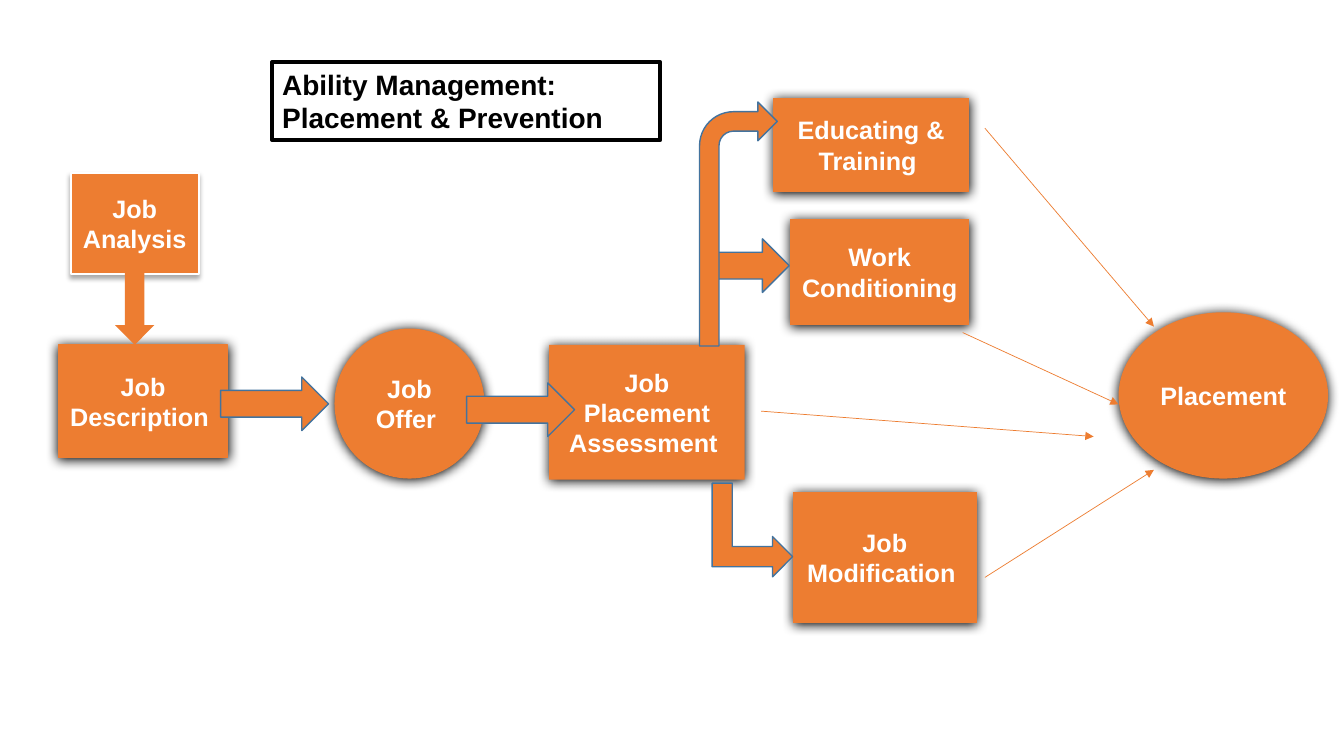
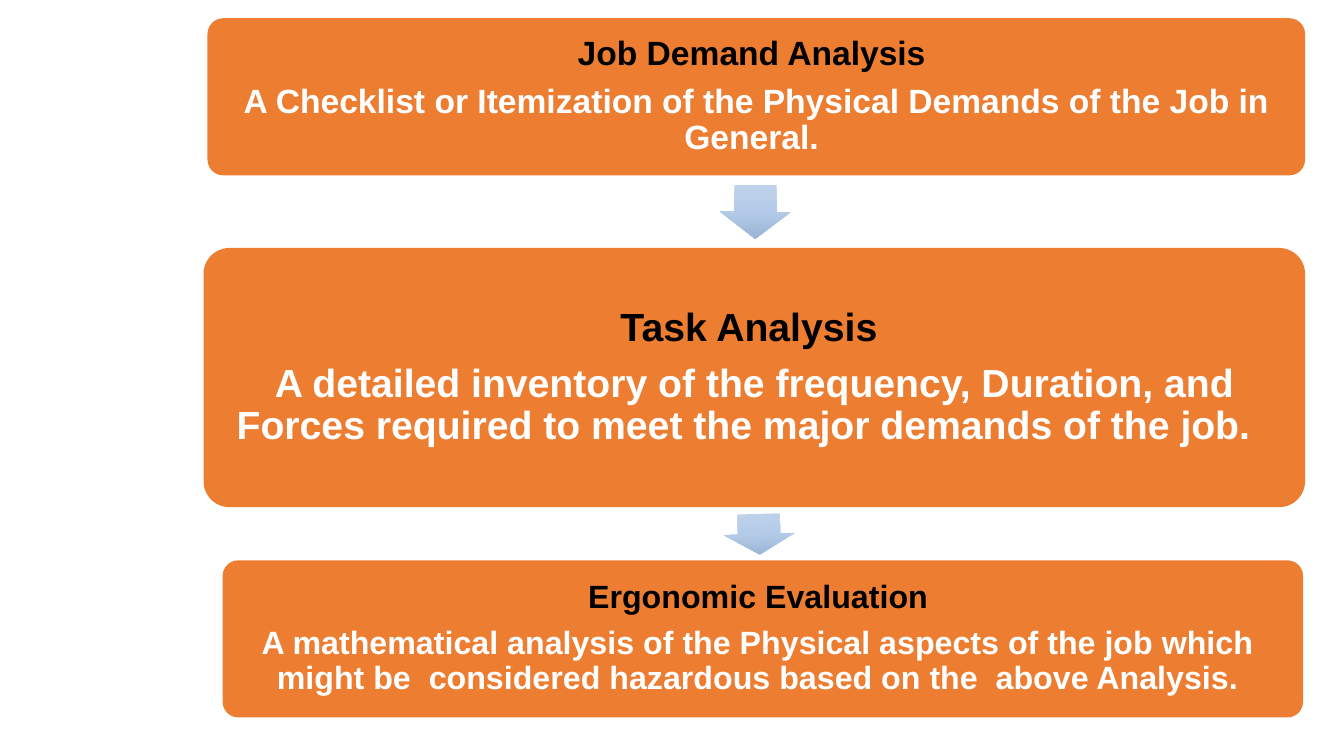
"""Build two slides on job placement flow and levels of job analysis."""
from copy import deepcopy
from dataclasses import dataclass

from lxml.etree import SubElement
from pptx import Presentation
from pptx.dml.color import RGBColor as RGB
from pptx.enum.shapes import MSO_CONNECTOR as LineKind, MSO_SHAPE as Kind
from pptx.enum.text import MSO_ANCHOR as Anchor, PP_ALIGN as Align
from pptx.oxml.ns import qn
from pptx.util import Cm, Pt


@dataclass(frozen=True)
class Theme:
    font: str = "Arial"
    orange: RGB = RGB(0xED, 0x7D, 0x31)
    outline: RGB = RGB(0x43, 0x73, 0x9E)
    black: RGB = RGB(0, 0, 0)
    white: RGB = RGB(255, 255, 255)
    fade: tuple = ("C0D2EB", "B3CBE9", "9BB4D3")
    title_size: int = 20
    step_size: int = 18
    soft_shadow: tuple = (32, 3.5, 2.2)
    strong_shadow: tuple = (100, 8.5, 1)


THEME = Theme()

HEADING = ["Ability Management:", "Placement & Prevention"]
HEADING_BOX = (6.86, 1.57, 9.78, 1.96)

STEPS = [
    ("Job Analysis ", Kind.RECTANGLE, (1.78, 4.37, 3.23, 2.54), (THEME.white, 1.5), THEME.soft_shadow),
    ("Job Description ", Kind.RECTANGLE, (1.47, 8.69, 4.27, 2.84), (THEME.orange, 1), THEME.strong_shadow),
    ("Job Offer ", Kind.OVAL, (8.43, 8.28, 3.78, 3.78), None, THEME.strong_shadow),
    ("Job Placement Assessment ", Kind.RECTANGLE, (13.84, 8.69, 4.93, 3.4), None, THEME.strong_shadow),
    ("Educating & Training ", Kind.FLOWCHART_PROCESS, (19.48, 2.46, 4.95, 2.39), None, THEME.strong_shadow),
    ("Work Conditioning ", Kind.FLOWCHART_PROCESS, (19.91, 5.51, 4.52, 2.69), None, THEME.strong_shadow),
    ("Placement ", Kind.OVAL, (28.19, 7.87, 5.28, 4.19), None, THEME.strong_shadow),
    ("Job Modification ", Kind.FLOWCHART_PROCESS, (19.99, 12.4, 4.62, 3.3), None, THEME.strong_shadow),
]

BLOCK_ARROWS = [
    (Kind.DOWN_ARROW, (2.9, 6.53, 0.99, 2.16), 0, None),
    (Kind.RIGHT_ARROW, (5.56, 9.5, 2.72, 1.35), 0, (THEME.outline, 1)),
    (Kind.RIGHT_ARROW, (11.76, 9.65, 2.72, 1.35), 0, (THEME.outline, 1)),
    (Kind.RIGHT_ARROW, (17.96, 6.02, 1.93, 1.35), 0, (THEME.outline, 1)),
    (Kind.BENT_UP_ARROW, (17.78, 12.34, 2.36, 2.03), 90, (THEME.outline, 1)),
    (Kind.BENT_ARROW, (17.63, 2.57, 1.96, 6.15), 0, (THEME.outline, 1)),
]

PLACEMENT_PATHS = [
    (24.82, 3.23, 29.08, 8.23),
    (24.26, 8.38, 28.19, 10.19),
    (19.18, 10.36, 27.56, 11),
    (24.82, 14.55, 29.08, 11.84),
]

LEVELS = [
    ("Job Demand Analysis ",
     "A Checklist or Itemization of the Physical Demands of the Job in General. ",
     (5.23, 0.46, 27.66, 3.96), 24, 0.25),
    ("Task Analysis ",
     "A detailed inventory of the frequency, Duration, and Forces required to meet "
     "the major demands of the job.  ",
     (5.13, 6.25, 27.76, 6.53), 28, 0.3),
    ("Ergonomic Evaluation ",
     "A mathematical analysis of the Physical aspects of the job which  might be  "
     "considered hazardous based on the  above Analysis. ",
     (5.61, 14.12, 27.23, 3.96), 23, 0.25),
]

LEVEL_ARROWS = [((18.36, 4.45, 1.35, 1.78), 90.4), ((18.62, 12.57, 1.02, 1.78), 88.3)]


def cms(lengths):
    return [Cm(length) for length in lengths]


def add_block(slide, kind, box, line=None, rotation=0):
    block = slide.shapes.add_shape(kind, *cms(box))
    block.shadow.inherit = False
    block.rotation = rotation
    block.fill.solid()
    block.fill.fore_color.rgb = THEME.orange
    if line:
        block.line.color.rgb, block.line.width = line[0], Pt(line[1])
    else:
        block.line.fill.background()
    return block


def cast_shadow(block, opacity, blur, distance):
    effects = block._element.spPr.find(qn("a:effectLst"))
    shadow = SubElement(effects, qn("a:outerShdw"), blurRad=str(Pt(blur)), dist=str(Pt(distance)),
                        dir="5400000", algn="ctr", rotWithShape="0")
    colour = SubElement(shadow, qn("a:srgbClr"), val=str(THEME.black))
    SubElement(colour, qn("a:alpha"), val=str(opacity * 1000))


def write(block, lines, size, colours, align=Align.CENTER, anchor=Anchor.MIDDLE):
    frame = block.text_frame
    frame.word_wrap = True
    frame.vertical_anchor = anchor
    frame.text = "\n".join(lines)
    for paragraph, colour in zip(frame.paragraphs, colours):
        paragraph.alignment = align
        font = paragraph.font
        font.name, font.size, font.bold = THEME.font, Pt(size), True
        font.color.rgb = colour
    return frame


def add_path(slide, ends):
    line = slide.shapes.add_connector(LineKind.STRAIGHT, *cms(ends))
    line.line.color.rgb = THEME.orange
    line.line.width = Pt(0.5)
    SubElement(line.line._get_or_add_ln(), qn("a:tailEnd"), type="triangle")
    SubElement(line._element.spPr, qn("a:effectLst"))


def fade_fill(block):
    block.fill.gradient()
    block.fill.gradient_angle = 0
    stop_list = block._element.spPr.find(".//" + qn("a:gsLst"))
    stop_list.append(deepcopy(stop_list[-1]))
    for index, (stop, colour) in enumerate(zip(block.fill.gradient_stops, THEME.fade)):
        stop.color.rgb = RGB.from_string(colour)
        stop.position = index / (len(THEME.fade) - 1)


def build_placement(slide):
    heading = slide.shapes.add_textbox(*cms(HEADING_BOX))
    heading.line.color.rgb, heading.line.width = THEME.black, Pt(3)
    write(heading, HEADING, THEME.title_size, [THEME.black] * 2, Align.LEFT, Anchor.TOP)
    for label, kind, box, line, shadow in STEPS:
        step = add_block(slide, kind, box, line)
        cast_shadow(step, *shadow)
        write(step, [label], THEME.step_size, [THEME.white])
    for ends in PLACEMENT_PATHS:
        add_path(slide, ends)
    for kind, box, rotation, line in BLOCK_ARROWS:
        add_block(slide, kind, box, line, rotation)


def build_levels(slide):
    for name, meaning, box, size, inset in LEVELS:
        level = add_block(slide, Kind.ROUNDED_RECTANGLE, box)
        level.adjustments[0] = 0.1
        frame = write(level, [name, meaning], size, [THEME.black, THEME.white])
        frame.margin_left = frame.margin_right = Cm(inset)
        frame.margin_top = frame.margin_bottom = Cm(inset)
        for paragraph in frame.paragraphs:
            paragraph.line_spacing = 0.9
            paragraph.space_after = Pt(round(0.35 * size, 1))
    for box, rotation in LEVEL_ARROWS:
        arrow = add_block(slide, Kind.RIGHT_ARROW, box, rotation=rotation)
        arrow.adjustments[0] = 0.6
        fade_fill(arrow)


def main():
    deck = Presentation()
    deck.slide_width, deck.slide_height = Cm(33.87), Cm(19.05)
    for build in (build_placement, build_levels):
        build(deck.slides.add_slide(deck.slide_layouts[6]))
    deck.save("out.pptx")


if __name__ == "__main__":
    main()
